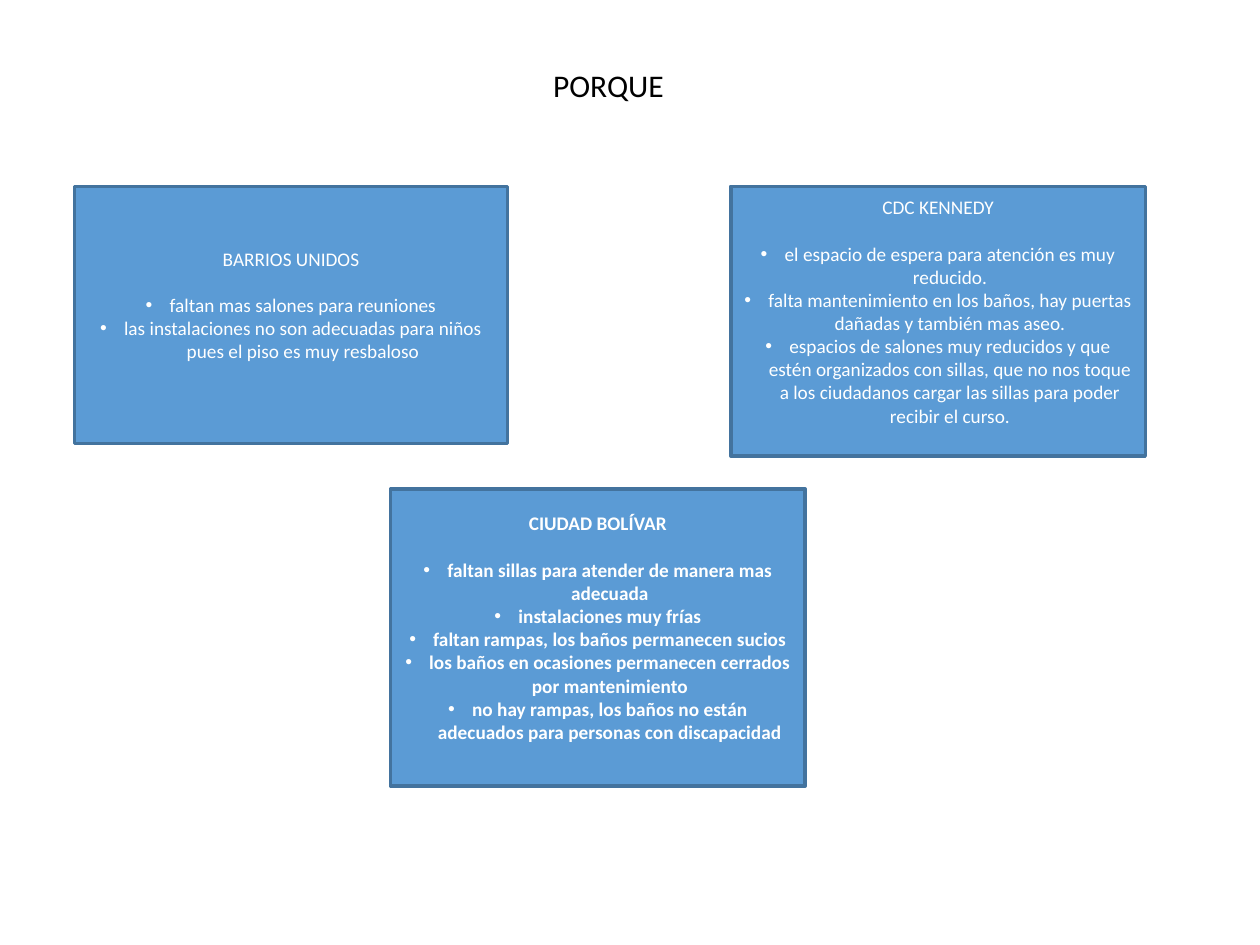
from lxml.etree import SubElement
from pptx import Presentation
from pptx.dml.color import RGBColor
from pptx.enum.shapes import MSO_SHAPE
from pptx.enum.text import MSO_ANCHOR, PP_ALIGN
from pptx.oxml.ns import qn
from pptx.util import Inches, Pt

THEME = {
    "font": "Calibri",
    "fill": RGBColor(0x5B, 0x9B, 0xD5),
    "line": RGBColor(0x43, 0x73, 0x9E),
    "light": RGBColor(0xFF, 0xFF, 0xFF),
    "dark": RGBColor(0x00, 0x00, 0x00),
    "title": Pt(18),
    "body": Pt(11),
}

# Place, bold, left, top, width, height, reasons
BOXES = [
    ("BARRIOS UNIDOS", False, 0.59, 1.48, 3.44, 2.04, [
        "faltan mas salones para reuniones",
        "las instalaciones no son adecuadas para niños pues el piso es muy resbaloso",
    ]),
    ("CDC KENNEDY", False, 5.8, 1.48, 3.29, 2.14, [
        "el espacio de espera para atención es muy reducido.",
        "falta mantenimiento en los baños, hay puertas dañadas y también mas aseo.",
        "espacios de salones muy reducidos y que estén organizados con sillas, que no nos "
        "toque a los ciudadanos cargar las sillas para poder recibir el curso.",
    ]),
    ("CIUDAD BOLÍVAR", True, 3.1, 3.88, 3.29, 2.36, [
        "faltan sillas para atender de manera mas adecuada",
        "instalaciones muy frías",
        "faltan rampas, los baños permanecen sucios",
        "los baños en ocasiones permanecen cerrados por mantenimiento",
        "no hay rampas, los baños no están adecuados para personas con discapacidad",
    ]),
]


def format_font(p, size, color, bold=False):
    values = {"name": THEME["font"], "size": size, "bold": bold}
    for r in p.runs:
        for name, value in values.items():
            setattr(r.font, name, value)
        r.font.color.rgb = color


def add_bullet(p):
    pPr = p._p.get_or_add_pPr()
    pPr.set("marL", str(Inches(0.19)))
    pPr.set("indent", str(Inches(-0.19)))
    SubElement(pPr, qn("a:buFont")).set("typeface", "Arial")
    SubElement(pPr, qn("a:buChar")).set("char", "•")


prs = Presentation()
prs.slide_width, prs.slide_height = Inches(10), Inches(7.5)
s = prs.slides.add_slide(prs.slide_layouts[5])

# Title
title = s.shapes.title
title.left, title.top = Inches(4.29), Inches(0.47)
title.width, title.height = Inches(3.57), Inches(0.4)
tf = title.text_frame
tf.text = "PORQUE"
tf.vertical_anchor = MSO_ANCHOR.TOP
p = tf.paragraphs[0]
p.alignment = PP_ALIGN.LEFT
format_font(p, THEME["title"], THEME["dark"])

# One box of reasons per place
for place, bold, left, top, width, height, reasons in BOXES:
    sp = s.shapes.add_shape(MSO_SHAPE.RECTANGLE, Inches(left), Inches(top),
                            Inches(width), Inches(height))
    sp.shadow.inherit = False
    sp.fill.solid()
    sp.fill.fore_color.rgb = THEME["fill"]
    sp.line.color.rgb = THEME["line"]
    sp.line.width = Pt(2)

    tf = sp.text_frame
    tf.word_wrap = True
    tf.vertical_anchor = MSO_ANCHOR.MIDDLE
    tf.margin_bottom = Inches(0.21)
    for i, text in enumerate([place] + reasons):
        p = tf.add_paragraph() if i else tf.paragraphs[0]
        p.alignment = PP_ALIGN.CENTER
        if i:
            add_bullet(p)
        else:
            p.space_after = Pt(13.4)
        p.add_run().text = text
        format_font(p, THEME["body"], THEME["light"], bold)

prs.save("out.pptx")
